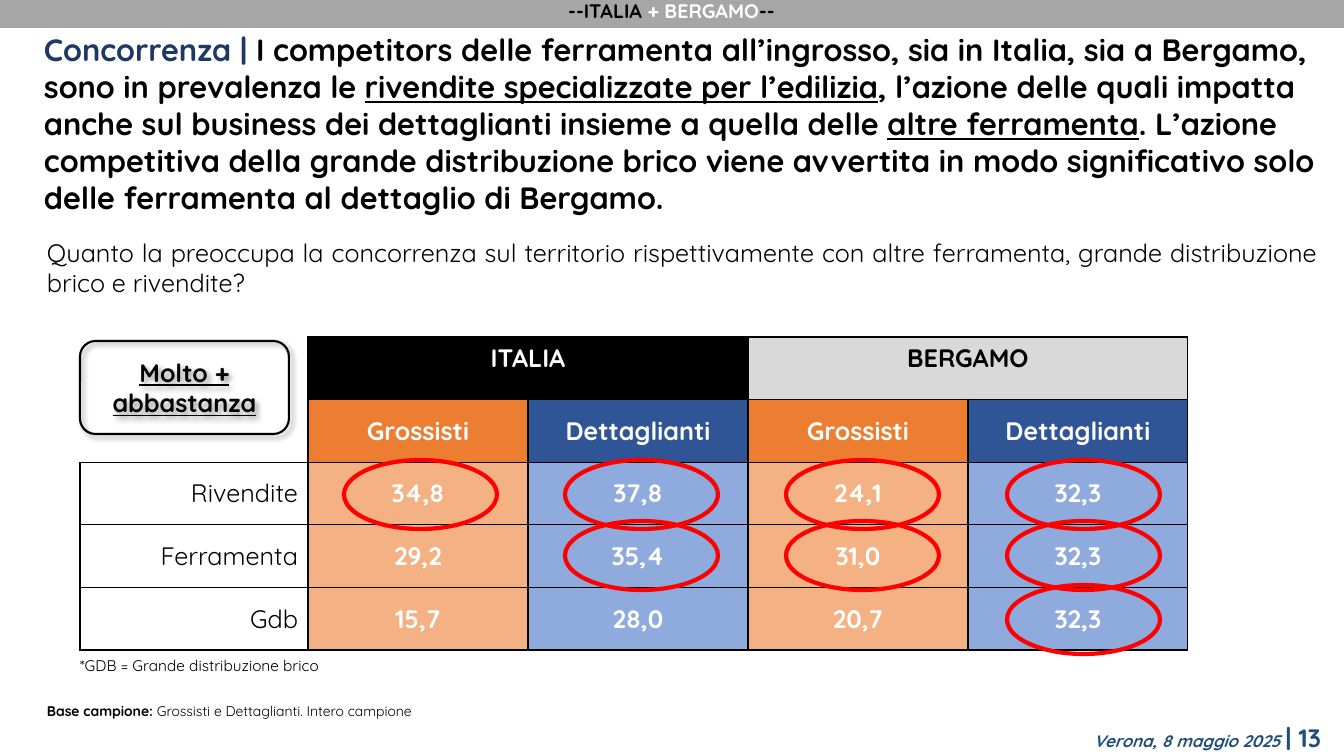
import pptx
import pptx.dml.color
import pptx.enum.shapes
import pptx.enum.text
import pptx.oxml
import pptx.oxml.ns
import pptx.util

PX = 914400 / 100.8
FONT = "Quicksand"
ALIGN = pptx.enum.text.PP_ALIGN
ANCHOR = pptx.enum.text.MSO_ANCHOR
SHAPE = pptx.enum.shapes.MSO_SHAPE

BLACK, WHITE, RED = "000000", "FFFFFF", "FF0000"
HEADER_FILLS = ["ED7D31", "2F5597"] * 2
VALUE_FILLS = ["F4B183", "8FAADC"] * 2
SEGMENTS = ["Grossisti", "Dettaglianti"] * 2
ROWS = [
    ("Rivendite", ["34,8", "37,8", "24,1", "32,3"]),
    ("Ferramenta", ["29,2", "35,4", "31,0", "32,3"]),
    ("Gdb", ["15,7", "28,0", "20,7", "32,3"]),
]
# Segment columns circled in each value row
CIRCLED = [(0, 1, 2, 3), (1, 2, 3), (3,)]


def px(length):
    return pptx.util.Emu(round(length * PX))


def rgb(value):
    return pptx.dml.color.RGBColor.from_string(value)


def write(frame, runs, size, color=BLACK, bold=None, italic=None, underline=None,
          align=ALIGN.LEFT):
    """Fill the first paragraph; each run is (text, font overrides)."""
    paragraph = frame.paragraphs[0]
    paragraph.alignment = align
    font = paragraph.font
    font.name, font.size = FONT, pptx.util.Pt(size)
    font.bold, font.italic, font.underline = bold, italic, underline
    font.color.rgb = rgb(color)
    for text, overrides in runs:
        run = paragraph.add_run()
        run.text = text
        for name, value in overrides.items():
            if name == "color":
                run.font.color.rgb = rgb(value)
            else:
                setattr(run.font, name, value)


def set_frame(frame, anchor=ANCHOR.TOP, inset_x=10, inset_y=5):
    frame.word_wrap = True
    frame.auto_size = pptx.enum.text.MSO_AUTO_SIZE.NONE
    frame.vertical_anchor = anchor
    frame.margin_left = frame.margin_right = px(inset_x)
    frame.margin_top = frame.margin_bottom = px(inset_y)


def add_text(slide, box, runs, size, anchor=ANCHOR.TOP, **style):
    shape = slide.shapes.add_textbox(*map(px, box))
    set_frame(shape.text_frame, anchor)
    write(shape.text_frame, runs, size, **style)


def add_outline(slide, kind, box, fill=None, line=None, width=1):
    shape = slide.shapes.add_shape(kind, *map(px, box))
    shape.shadow.inherit = False
    if fill:
        shape.fill.solid()
        shape.fill.fore_color.rgb = rgb(fill)
    else:
        shape.fill.background()
    if line:
        shape.line.color.rgb = rgb(line)
        shape.line.width = pptx.util.Pt(width)
    else:
        shape.line.fill.background()
    return shape


def add_headline(slide, box):
    title = slide.shapes.title
    title.left, title.top, title.width, title.height = map(px, box)
    set_frame(title.text_frame, inset_x=7, inset_y=4)
    write(title.text_frame, [
        ("Concorrenza | ", {"color": "203864"}),
        ("I competitors delle ferramenta all’ingrosso, sia in Italia, sia a Bergamo, "
         "sono in prevalenza le ", {}),
        ("rivendite specializzate per l’edilizia", {"underline": True}),
        (", l’azione delle quali impatta anche sul business dei dettaglianti insieme "
         "a quella delle ", {}),
        ("altre ferramenta", {"underline": True}),
        (". L’azione competitiva della grande distribuzione brico viene avvertita in modo "
         "significativo solo delle ferramenta al dettaglio di Bergamo.", {}),
    ], 22, bold=True)


def add_area_bar(slide, box):
    bar = add_outline(slide, SHAPE.RECTANGLE, box, fill="A6A6A6")
    set_frame(bar.text_frame, ANCHOR.MIDDLE)
    write(bar.text_frame, [("--ITALIA ", {}), ("+ BERGAMO", {"color": WHITE}), ("--", {})],
          14, bold=True, align=ALIGN.CENTER)


def set_borders(cell, sides):
    properties = cell._tc.get_or_add_tcPr()
    namespace = pptx.oxml.ns.nsdecls("a")
    for side in "LRTB":
        paint = (f'<a:solidFill><a:srgbClr val="{BLACK}"/></a:solidFill>'
                 if side in sides else "<a:noFill/>")
        properties.append(pptx.oxml.parse_xml(
            f'<a:ln{side} {namespace} w="12700">{paint}</a:ln{side}>'))


def format_cell(cell, text, fill, color=WHITE, bold=True, align=ALIGN.CENTER,
                anchor=ANCHOR.MIDDLE, sides="LRTB"):
    set_borders(cell, sides)
    cell.fill.solid()
    cell.fill.fore_color.rgb = rgb(fill)
    cell.vertical_anchor = anchor
    write(cell.text_frame, [(text, {})] if text else [], 18, color, bold, align=align)


def add_concern_table(slide, box):
    left, top, width, height = box
    table = slide.shapes.add_table(5, 5, *map(px, box)).table
    table.first_row = table.horz_banding = False
    segment_width = 220
    for index, column in enumerate(table.columns):
        column.width = px(segment_width if index else width - 4 * segment_width)
    for row in table.rows:
        row.height = px(height / 5)

    # Headers
    format_cell(table.cell(0, 0), "", WHITE, sides="R")
    format_cell(table.cell(1, 0), "", WHITE, sides="RB")
    areas = [(1, "ITALIA", BLACK, WHITE), (3, "BERGAMO", "D9D9D9", BLACK)]
    for column, area, fill, color in areas:
        table.cell(0, column).merge(table.cell(0, column + 1))
        format_cell(table.cell(0, column), area, fill, color, anchor=ANCHOR.TOP)
        set_borders(table.cell(0, column + 1), "LRTB")
    for column, (segment, fill) in enumerate(zip(SEGMENTS, HEADER_FILLS), 1):
        format_cell(table.cell(1, column), segment, fill)

    # Values
    for row, (label, values) in enumerate(ROWS, 2):
        format_cell(table.cell(row, 0), label, WHITE, BLACK, False, ALIGN.RIGHT)
        for column, (value, fill) in enumerate(zip(values, VALUE_FILLS), 1):
            format_cell(table.cell(row, column), value, fill)

    # Circles around the main concerns
    for circle_top, columns in zip((123, 184, 248), CIRCLED):
        for column in columns:
            circle = (left + 264 + 221 * column, top + circle_top, 153, 69)
            add_outline(slide, SHAPE.OVAL, circle, line=RED, width=3)


def add_answer_label(slide, box):
    label = add_outline(slide, SHAPE.ROUNDED_RECTANGLE, box, line=BLACK, width=1.5)
    effects = label._element.spPr.find(pptx.oxml.ns.qn("a:effectLst"))
    effects.append(pptx.oxml.parse_xml(
        f'<a:outerShdw {pptx.oxml.ns.nsdecls("a")} blurRad="50800" dist="38100" '
        f'dir="2700000" algn="tl" rotWithShape="0"><a:srgbClr val="{BLACK}">'
        '<a:alpha val="40000"/></a:srgbClr></a:outerShdw>'))
    set_frame(label.text_frame, ANCHOR.MIDDLE)
    write(label.text_frame, [("Molto + abbastanza", {})], 18, bold=True, underline=True,
          align=ALIGN.CENTER)


def add_notes_and_footer(slide, box):
    left, top, width, height = box
    add_text(slide, (left + 33, top, 280, 45), [("*GDB = Grande distribuzione brico", {})],
             11, anchor=ANCHOR.MIDDLE)
    add_text(slide, (left, top + 55, width, 27),
             [("Base campione: ", {"bold": True}),
              ("Grossisti e Dettaglianti. Intero campione", {})], 10)
    add_text(slide, (left + 595, top + height - 40, 699, 40),
             [("Verona, 8 maggio 2025 ", {"italic": True}),
              ("| 13", {"size": pptx.util.Pt(18)})],
             12, anchor=ANCHOR.MIDDLE, color="1F4E79", bold=True, align=ALIGN.RIGHT)


def main():
    presentation = pptx.Presentation()
    presentation.slide_width, presentation.slide_height = px(1344), px(756)
    slide = presentation.slides.add_slide(presentation.slide_layouts[5])
    add_headline(slide, (37, 27, 1298, 195))
    add_area_bar(slide, (-1, -6, 1345, 34))
    add_text(slide, (37, 232, 1290, 72),
             [("Quanto la preoccupa la concorrenza sul territorio rispettivamente con altre "
               "ferramenta, grande distribuzione brico e rivendite?", {})],
             18, align=ALIGN.JUSTIFY)
    add_concern_table(slide, (80, 337, 1108, 313))
    add_answer_label(slide, (80, 341, 209, 93))
    add_notes_and_footer(slide, (37, 643, 1298, 114))
    presentation.save("out.pptx")


if __name__ == "__main__":
    main()
